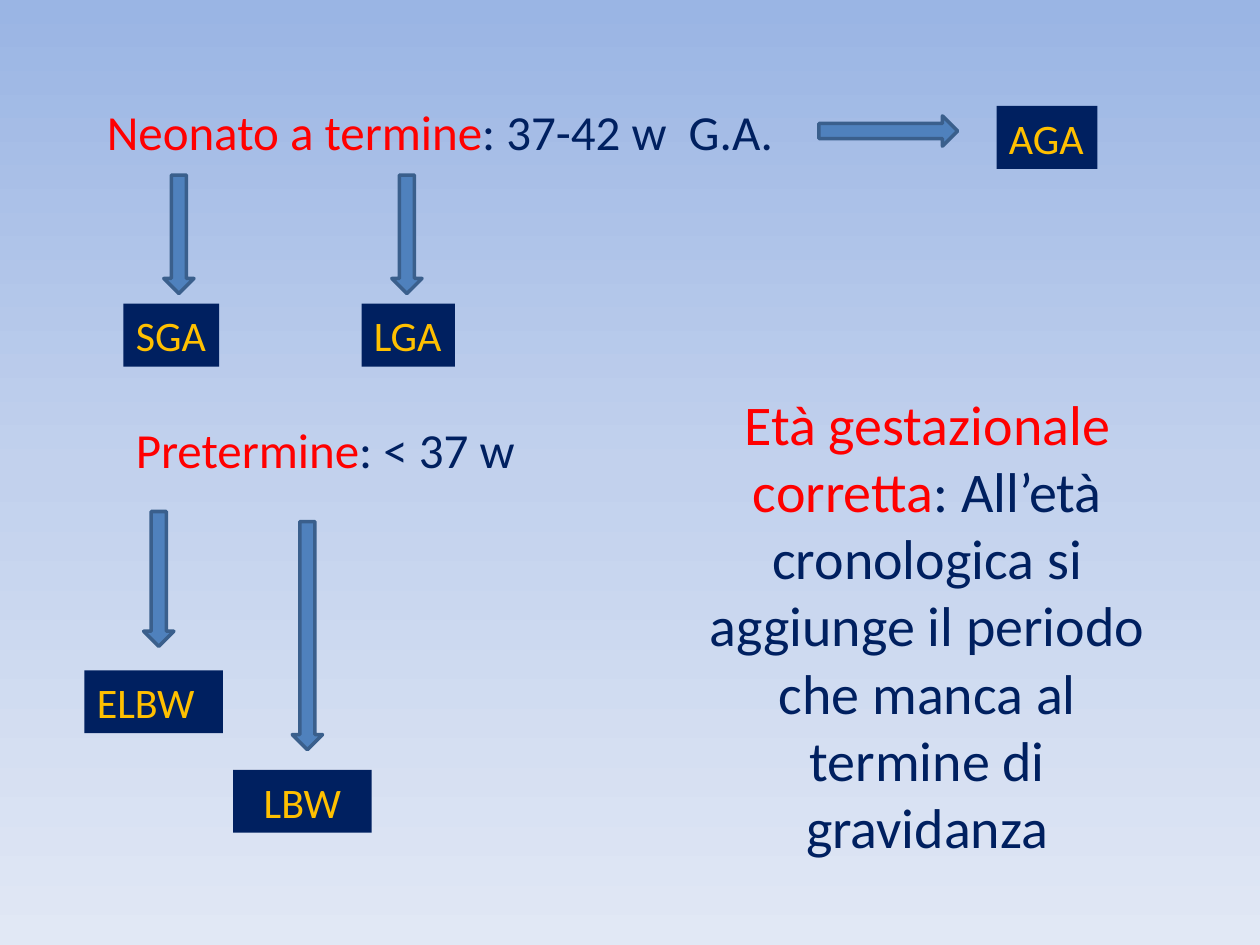
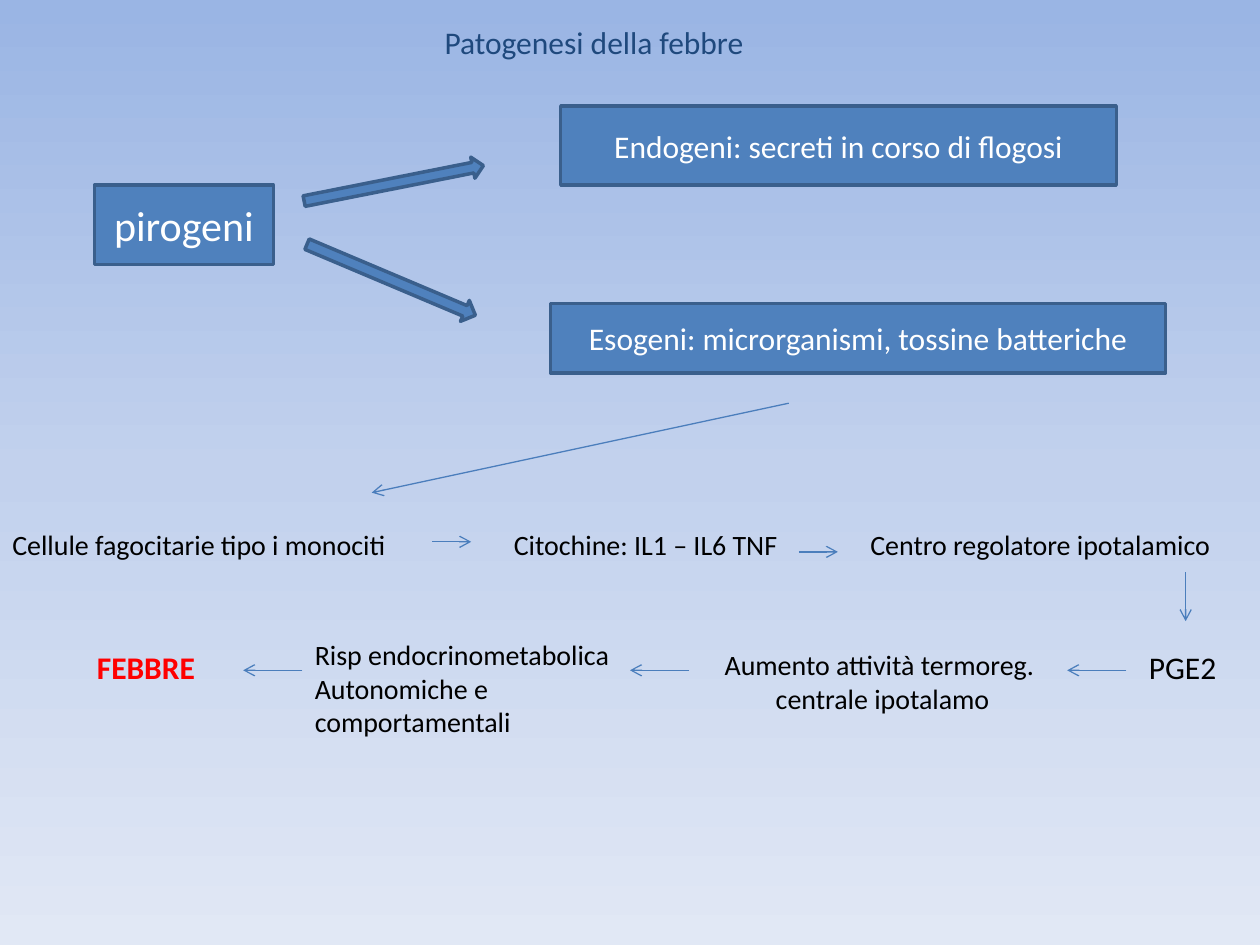
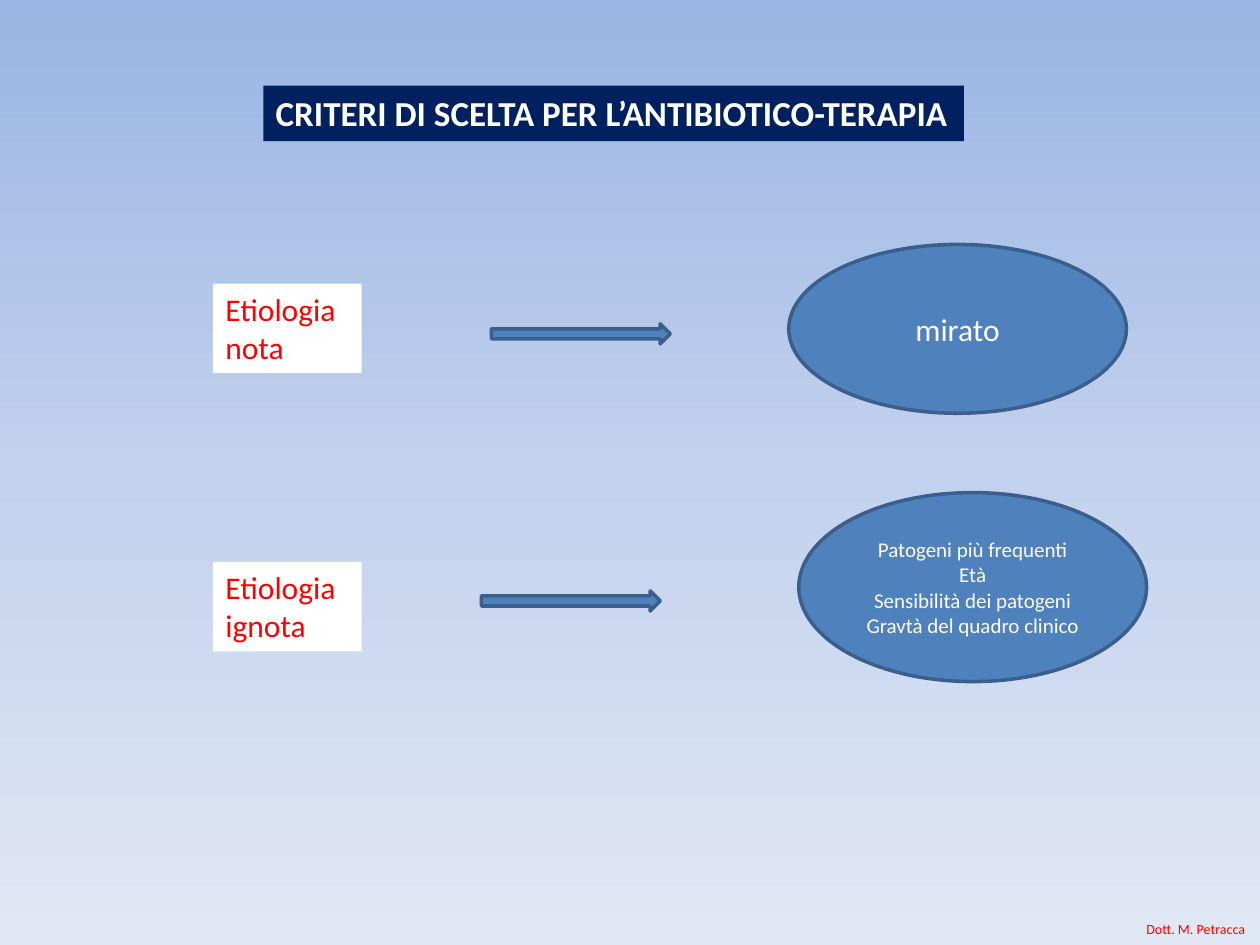
from copy import deepcopy

from pptx import Presentation
from pptx import util as u
from pptx.dml.color import RGBColor
from pptx.enum import shapes, text
from pptx.oxml.ns import qn
from lxml import etree

# Shared style
FONT = "Calibri"
BLUE, BLUE_EDGE, BLUE_LINE = "4F81BD", "3A5F8C", "4B7EBC"
NAVY, TITLE_BLUE = "002060", "1F497D"
RED, GOLD, WHITE, BLACK = "FF0000", "FFC000", "FFFFFF", "000000"
BACKGROUND = [(0, "9AB5E4"), (0.5, "C2D1ED"), (1, "E1E8F5")]

SHAPE = shapes.MSO_SHAPE
CENTER = text.PP_ALIGN.CENTER


def rgb(value):
    return RGBColor.from_string(value)


def inches(*lengths):
    return [u.Inches(length) for length in lengths]


def add_slide(presentation):
    """Add a blank slide with the shared vertical gradient."""
    slide = presentation.slides.add_slide(presentation.slide_layouts[6])
    fill = slide.background.fill
    fill.gradient()
    fill.gradient_angle = 270
    stop_list = slide.element.find(".//" + qn("a:gsLst"))
    stop_list.append(deepcopy(stop_list[-1]))
    for stop, (position, color) in zip(fill.gradient_stops, BACKGROUND):
        stop.position = position
        stop.color.rgb = rgb(color)
    return slide


def style_paragraph(paragraph, size, color=None, bold=False, align=None):
    paragraph.alignment = align
    paragraph.font.name = FONT
    paragraph.font.size = u.Pt(size)
    paragraph.font.bold = bold
    if color:
        paragraph.font.color.rgb = rgb(color)


def write(shape, words, size, color, bold=False, align=None):
    """Write one paragraph for each line of words."""
    shape.text_frame.text = words
    for paragraph in shape.text_frame.paragraphs:
        style_paragraph(paragraph, size, color, bold, align)


def add_label(slide, box, words, size, color=BLACK, fill=None, wrap=False,
              bold=False, align=None):
    label = slide.shapes.add_textbox(*inches(*box))
    label.text_frame.word_wrap = wrap
    if fill:
        label.fill.solid()
        label.fill.fore_color.rgb = rgb(fill)
    write(label, words, size, color, bold, align)


def add_definition(slide, box, term, meaning, size, wrap=False, align=None):
    """Add a red term followed by its meaning in navy."""
    frame = slide.shapes.add_textbox(*inches(*box)).text_frame
    frame.word_wrap = wrap
    paragraph = frame.paragraphs[0]
    for words, color in ((term, RED), (meaning, NAVY)):
        run = paragraph.add_run()
        run.text = words
        run.font.color.rgb = rgb(color)
    style_paragraph(paragraph, size, align=align)


def add_blue_shape(slide, kind, box, rotation=0):
    shape = slide.shapes.add_shape(kind, *inches(*box))
    shape.shadow.inherit = False
    shape.rotation = rotation
    shape.fill.solid()
    shape.fill.fore_color.rgb = rgb(BLUE)
    shape.line.color.rgb = rgb(BLUE_EDGE)
    shape.line.width = u.Pt(2)
    return shape


def add_blue_box(slide, kind, box, words, size):
    shape = add_blue_shape(slide, kind, box)
    shape.text_frame.vertical_anchor = text.MSO_ANCHOR.MIDDLE
    write(shape, words, size, WHITE, align=CENTER)


def add_thin_arrow(slide, start, end):
    arrow = slide.shapes.add_connector(
        shapes.MSO_CONNECTOR.STRAIGHT, *inches(*start, *end))
    arrow.line.color.rgb = rgb(BLUE_LINE)
    arrow.line.width = u.Pt(0.75)
    line = arrow.line._get_or_add_ln()
    etree.SubElement(line, qn("a:tailEnd"), type="arrow")
    etree.SubElement(arrow._element.spPr, qn("a:effectLst"))


def build_gestational_age(presentation):
    slide = add_slide(presentation)

    # Definitions
    add_definition(slide, (0.75, 0.76, 5.56, 0.57),
                   "Neonato a termine", ": 37-42 w  G.A.", 28)
    add_definition(slide, (0.98, 3.28, 3.24, 0.57),
                   "Pretermine", ": < 37 w", 28)
    add_definition(slide, (5.47, 3.04, 3.78, 3.87),
                   "Età gestazionale corretta",
                   ": All’età cronologica si aggiunge il periodo che manca"
                   " al termine di gravidanza", 32, wrap=True, align=CENTER)

    # Arrows to the classes
    add_blue_shape(slide, SHAPE.RIGHT_ARROW, (6.5, 0.92, 1.1, 0.24))
    for left, top, height in [(1.3, 1.39, 0.94), (3.11, 1.39, 0.94),
                              (1.14, 4.06, 1.07), (2.32, 4.14, 1.81)]:
        add_blue_shape(slide, SHAPE.DOWN_ARROW, (left, top, 0.24, height))

    # Classes
    for name, left, top, width, align in [
            ("AGA", 7.91, 0.84, 0.8, None), ("SGA", 0.98, 2.41, 0.76, None),
            ("LGA", 2.87, 2.41, 0.74, None), ("ELBW", 0.67, 5.32, 1.1, None),
            ("LBW", 1.85, 6.11, 1.1, CENTER)]:
        add_label(slide, (left, top, width, 0.5), name, 24, GOLD, NAVY,
                  wrap=width > 1, align=align)


def build_fever(presentation):
    slide = add_slide(presentation)
    add_label(slide, (3.43, 0.13, 2.6, 0.4), "Patogenesi della febbre", 18,
              TITLE_BLUE)

    # Pyrogens and their two kinds
    for box, words, size in [
            ((0.75, 1.47, 1.42, 0.63), "pirogeni", 24),
            ((4.45, 0.84, 4.41, 0.63),
             "Endogeni: secreti in corso di flogosi", 18),
            ((4.37, 2.41, 4.88, 0.55),
             "Esogeni: microrganismi, tossine batteriche", 18)]:
        add_blue_box(slide, SHAPE.RECTANGLE, box, words, size)
    add_blue_shape(slide, SHAPE.RIGHT_ARROW, (2.4, 1.37, 1.45, 0.17), 348.8)
    add_blue_shape(slide, SHAPE.RIGHT_ARROW, (2.38, 2.13, 1.45, 0.18), 22.9)

    # Steps that lead to fever
    for left, width, words in [
            (0, 3.2, "Cellule fagocitarie tipo i monociti"),
            (3.98, 2.32, "Citochine: IL1 – IL6 TNF"),
            (6.81, 2.93, "Centro regolatore ipotalamico")]:
        add_label(slide, (left, 4.14, width, 0.37), words, 16)
    add_label(slide, (9.02, 5.09, 0.74, 0.4), "PGE2", 18)
    add_label(slide, (5.63, 5.09, 2.7, 0.64),
              "Aumento attività termoreg.\n centrale ipotalamo", 16,
              align=CENTER)
    add_label(slide, (2.4, 5.01, 2.57, 0.91),
              "Risp endocrinometabolica\nAutonomiche e\ncomportamentali", 16)
    add_label(slide, (0.67, 5.09, 0.99, 0.4), "FEBBRE", 18, RED, bold=True)

    # Arrows between the steps
    for start, end in [((6.26, 3.2), (2.95, 3.91)),
                       ((3.43, 4.3), (3.74, 4.3)),
                       ((6.34, 4.38), (6.65, 4.38)),
                       ((9.41, 4.54), (9.41, 4.93))]:
        add_thin_arrow(slide, start, end)
    for right in (8.94, 5.47, 2.4):
        add_thin_arrow(slide, (right, 5.32), (right - 0.47, 5.32))


def build_antibiotic_choice(presentation):
    slide = add_slide(presentation)
    add_label(slide, (9, 7.26, 1, 0.24), "Dott. M. Petracca", 8, RED)
    add_label(slide, (2.09, 0.68, 5.56, 0.44),
              "CRITERI DI SCELTA PER L’ANTIBIOTICO-TERAPIA", 20, WHITE, NAVY,
              wrap=True, bold=True)

    # One row for each aetiology: cause, arrow, criteria
    criteria = ("Patogeni più frequenti\nEtà\nSensibilità dei patogeni\n"
                "Gravtà del quadro clinico")
    for cause, top, arrow, ellipse, words, size in [
            ("Etiologia nota", 2.25, (3.9, 2.57), (6.26, 1.94, 2.68, 1.34),
             "mirato", 18),
            ("Etiologia ignota", 4.46, (3.82, 4.69), (6.34, 3.91, 2.76, 1.5),
             criteria, 12)]:
        add_label(slide, (1.69, top, 1.18, 0.71), cause, 18, RED, WHITE,
                  wrap=True)
        add_blue_shape(slide, SHAPE.RIGHT_ARROW, (*arrow, 1.42, 0.16))
        add_blue_box(slide, SHAPE.OVAL, ellipse, words, size)


def main():
    presentation = Presentation()
    presentation.slide_width, presentation.slide_height = inches(10, 7.5)
    build_gestational_age(presentation)
    build_fever(presentation)
    build_antibiotic_choice(presentation)
    presentation.save("out.pptx")


if __name__ == "__main__":
    main()
